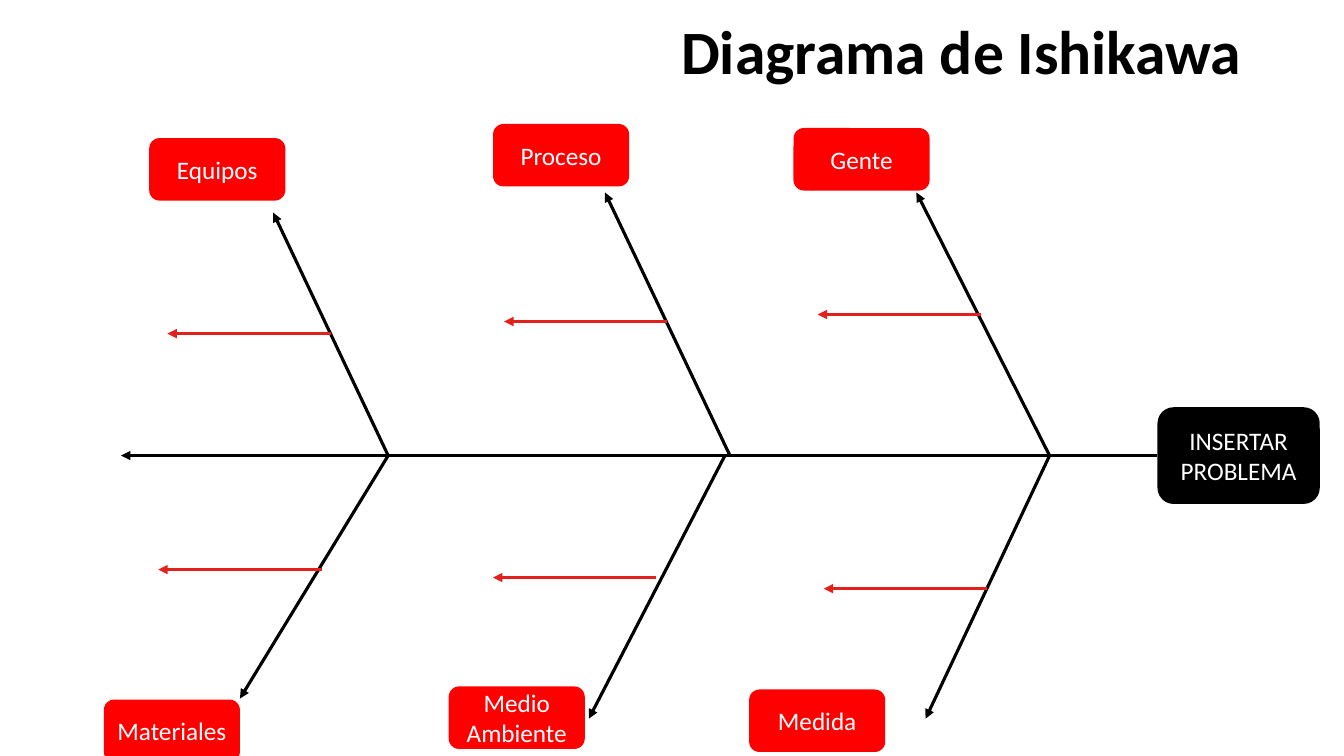
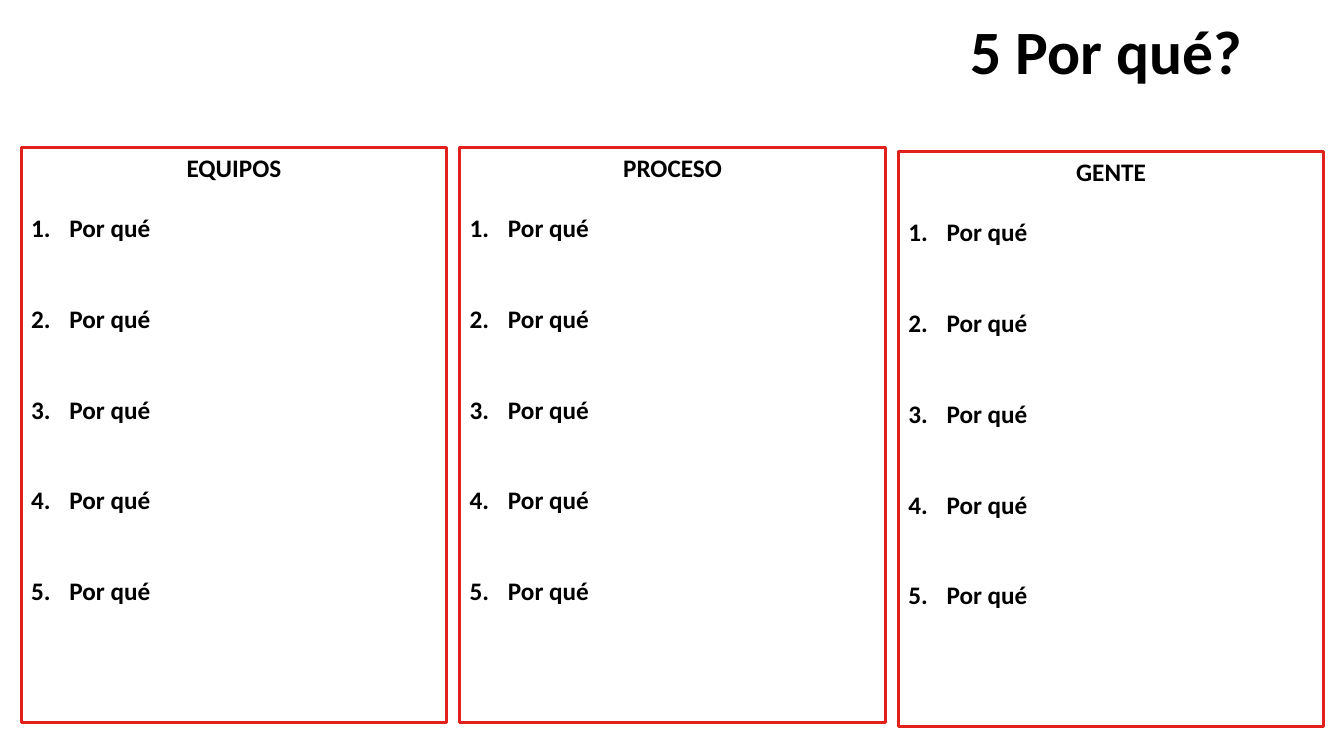
"""Build an Ishikawa diagram and a five-whys worksheet."""
from pptx import Presentation
from pptx.dml.color import RGBColor
from pptx.enum.shapes import MSO_CONNECTOR, MSO_SHAPE as Shape
from pptx.enum.text import MSO_ANCHOR as Anchor, PP_ALIGN as Align
from pptx.oxml.ns import qn
from pptx.util import Inches, Pt
from lxml.etree import SubElement

BLACK = RGBColor(0x00, 0x00, 0x00)
WHITE = RGBColor(0xFF, 0xFF, 0xFF)
RED = RGBColor(0xFF, 0x00, 0x00)
CRIMSON = RGBColor(0xE2, 0x21, 0x1C)

SPINE_Y = 4.52
TWIG_LENGTH = 1.62
WHY_COUNT = 5

# label, box corner, rib foot x, rib tip, twig start
BONES = [
    ("Gente", (7.87, 1.27), 10.41, (9.09, 1.91), (9.73, 3.12)),
    ("Proceso", (4.89, 1.23), 7.24, (6.0, 1.91), (6.62, 3.19)),
    ("Equipos", (1.48, 1.37), 3.85, (2.71, 2.11), (3.28, 3.31)),
    ("Medida", (7.43, 6.84), 10.41, (9.18, 7.13), (9.79, 5.84)),
    ("Medio Ambiente", (4.45, 6.81), 7.19, (5.84, 7.13), (6.51, 5.73)),
    ("Materiales", (1.03, 6.94), 3.85, (2.38, 6.93), (3.19, 5.65)),
]
PANELS = [("EQUIPOS", 1.46), ("PROCESO", 1.46), ("GENTE", 1.5)]
PANEL_LEFT, PANEL_PITCH = 0.21, 4.35


class Worksheet:
    """Hold the deck style and the current slide."""

    font = "Calibri"
    body_size = 18
    title_size = 44
    line_width = 2.25
    line_height = 21.6

    def __init__(self):
        self.deck = Presentation()
        self.deck.slide_width = Inches(13.33)
        self.deck.slide_height = Inches(7.5)
        self.page = None

    def add_page(self, title):
        """Start a blank slide with its title."""
        self.page = self.deck.slides.add_slide(self.deck.slide_layouts[6])
        box = self.page.shapes.add_textbox(
            Inches(0.92), Inches(-0.18), Inches(11.5), Inches(1.45))
        frame = box.text_frame
        frame.word_wrap = True
        frame.vertical_anchor = Anchor.MIDDLE
        para = frame.paragraphs[0]
        para.alignment = Align.RIGHT
        para.line_spacing = 0.9
        self.add_span(para, title, BLACK, self.title_size, bold=True)

    def add_span(self, para, text, color, size=body_size, bold=False):
        """Add one styled run to a paragraph."""
        span = para.add_run()
        span.text = text
        span.font.name = self.font
        span.font.size = Pt(size)
        span.font.bold = bold
        span.font.color.rgb = color

    def label(self, text, left, top, width, height, fill):
        """Add a filled rounded box with centred text."""
        box = self.page.shapes.add_shape(
            Shape.ROUNDED_RECTANGLE,
            Inches(left), Inches(top), Inches(width), Inches(height))
        box.shadow.inherit = False
        box.fill.solid()
        box.fill.fore_color.rgb = fill
        box.line.fill.background()
        box.text_frame.word_wrap = True
        box.text_frame.vertical_anchor = Anchor.MIDDLE
        para = box.text_frame.paragraphs[0]
        para.alignment = Align.CENTER
        self.add_span(para, text, WHITE)
        return box

    def arrow(self, start, end, color):
        """Add a straight arrow pointing at its end."""
        arrow = self.page.shapes.add_connector(
            MSO_CONNECTOR.STRAIGHT, *map(Inches, (*start, *end)))
        arrow.line.color.rgb = color
        arrow.line.width = Pt(self.line_width)
        properties = arrow.element.spPr
        SubElement(properties.find(qn("a:ln")), qn("a:tailEnd"), type="triangle")
        SubElement(properties, qn("a:effectLst"))
        return arrow

    def why_panel(self, heading, left, top):
        """Add an outlined panel with a heading and numbered questions."""
        panel = self.page.shapes.add_shape(
            Shape.RECTANGLE,
            Inches(left), Inches(top), Inches(4.22), Inches(5.71))
        panel.shadow.inherit = False
        panel.fill.background()
        panel.line.color.rgb = CRIMSON
        panel.line.width = Pt(self.line_width)
        frame = panel.text_frame
        frame.word_wrap = True
        frame.vertical_anchor = Anchor.TOP
        para = frame.paragraphs[0]
        para.alignment = Align.CENTER
        self.add_span(para, heading, BLACK, bold=True)
        for number in range(WHY_COUNT):
            para = frame.add_paragraph()
            self.add_number(para)
            para.alignment = Align.LEFT
            para.space_before = Pt(self.line_height * (2 if number else 1))
            self.add_span(para, "Por qué", BLACK, bold=True)

    def add_number(self, para):
        """Give a paragraph automatic numbering and a hanging indent."""
        properties = para._p.get_or_add_pPr()
        indent = Inches(0.38)
        properties.set("marL", str(indent))
        properties.set("indent", str(-indent))
        SubElement(properties, qn("a:buFont"), typeface=self.font)
        SubElement(properties, qn("a:buAutoNum"), type="arabicPeriod")


def main():
    """Build both slides and save the deck."""
    sheet = Worksheet()

    sheet.add_page("Diagrama de Ishikawa")
    problem = sheet.label("INSERTAR PROBLEMA", 11.48, 4.04, 1.61, 0.96, BLACK)
    spine = sheet.arrow((11.48, SPINE_Y), (1.2, SPINE_Y), BLACK)
    spine.begin_connect(problem, 1)
    for text, corner, foot, tip, twig in BONES:
        sheet.arrow((foot, SPINE_Y), tip, BLACK)
        sheet.arrow(twig, (twig[0] - TWIG_LENGTH, twig[1]), CRIMSON)
        sheet.label(text, *corner, 1.35, 0.62, RED)

    sheet.add_page("5 Por qué?")
    for column, (heading, top) in enumerate(PANELS):
        sheet.why_panel(heading, PANEL_LEFT + column * PANEL_PITCH, top)

    sheet.deck.save("out.pptx")


if __name__ == "__main__":
    main()
